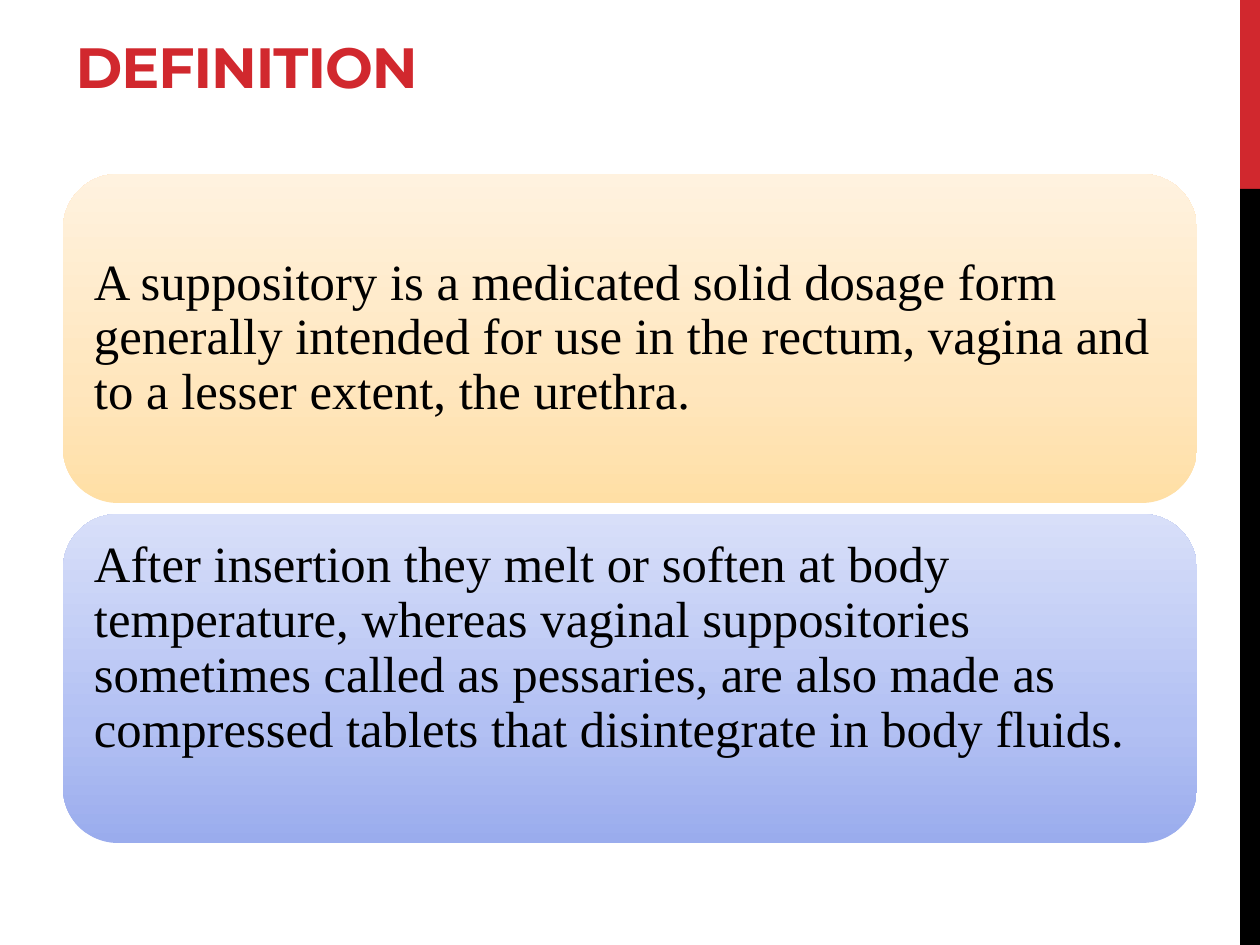
from copy import deepcopy
from dataclasses import dataclass

from pptx import Presentation
from pptx import util as u
from pptx.dml.color import RGBColor
from pptx.enum import shapes, text
from pptx.oxml.ns import qn
from pptx.shapes.autoshape import Shape
from pptx.slide import Slide

PX_PER_INCH = 126


@dataclass(frozen=True)
class Theme:
    red: str = "D1282E"
    black: str = "000000"
    cream: tuple[str, ...] = ("FFDFA5", "FFE6BD", "FFF2DF")
    periwinkle: tuple[str, ...] = ("9AACED", "B2C0F3", "D8DFF9")
    stops: tuple[float, ...] = (0, 0.35, 1)
    title_font: str = "Montserrat"
    body_font: str = "Times New Roman"
    title_size: float = 32.4
    body_size: float = 29


@dataclass(frozen=True)
class Box:
    left: int
    top: int
    width: int
    height: int


@dataclass(frozen=True)
class Panel:
    wording: str
    colors: tuple[str, ...]
    extra_bottom: int = 0


THEME = Theme()
BARS = ((Box(1240, 0, 20, 189), THEME.red), (Box(1240, 189, 20, 756), THEME.black))
TITLE_BOX = Box(63, 21, 1134, 85)
FIRST_PANEL = Box(63, 174, 1134, 329)
PANEL_GAP = 11
PANEL_INSET = 15
PANELS = (
    Panel("A suppository is a medicated solid dosage form generally intended for use "
          "in the rectum, vagina and to a lesser extent, the urethra.", THEME.cream),
    Panel("After insertion they melt or soften at body temperature, whereas vaginal "
          "suppositories sometimes called as pessaries, are also made as compressed "
          "tablets that disintegrate in body fluids.", THEME.periwinkle, extra_bottom=60),
)


def px(length: int) -> u.Emu:
    return u.Emu(round(length * 914400 / PX_PER_INCH))


def place(box: Box) -> tuple[u.Emu, ...]:
    return px(box.left), px(box.top), px(box.width), px(box.height)


def add_shape(slide: Slide, kind: shapes.MSO_SHAPE, box: Box) -> Shape:
    shape = slide.shapes.add_shape(kind, *place(box))
    shape.shadow.inherit = False
    shape.line.fill.background()
    return shape


def add_bar(slide: Slide, box: Box, color: str) -> None:
    bar = add_shape(slide, shapes.MSO_SHAPE.RECTANGLE, box)
    bar.fill.solid()
    bar.fill.fore_color.rgb = RGBColor.from_string(color)


def fill_gradient(shape: Shape, colors: tuple[str, ...]) -> None:
    shape.fill.gradient()
    shape.fill.gradient_angle = 90
    stop_list = shape.element.spPr.find(qn("a:gradFill")).find(qn("a:gsLst"))
    while len(stop_list) < len(colors):
        stop_list.append(deepcopy(stop_list[0]))
    for stop, position, color in zip(shape.fill.gradient_stops, THEME.stops, colors):
        stop.position = position
        stop.color.rgb = RGBColor.from_string(color)


def add_panel(slide: Slide, panel: Panel, box: Box) -> None:
    shape = add_shape(slide, shapes.MSO_SHAPE.ROUNDED_RECTANGLE, box)
    fill_gradient(shape, panel.colors)
    frame = shape.text_frame
    frame.word_wrap = True
    frame.vertical_anchor = text.MSO_ANCHOR.MIDDLE
    frame.margin_left = frame.margin_right = frame.margin_top = px(PANEL_INSET)
    frame.margin_bottom = px(PANEL_INSET + panel.extra_bottom)
    frame.text = panel.wording
    paragraph = frame.paragraphs[0]
    paragraph.alignment = text.PP_ALIGN.LEFT
    paragraph.line_spacing = 0.9
    paragraph.font.name = THEME.body_font
    paragraph.font.size = u.Pt(THEME.body_size)
    paragraph.font.color.rgb = RGBColor.from_string(THEME.black)


def set_title(slide: Slide, wording: str) -> None:
    title = slide.shapes.title
    title.left, title.top, title.width, title.height = place(TITLE_BOX)
    frame = title.text_frame
    frame.text = wording
    frame.vertical_anchor = text.MSO_ANCHOR.BOTTOM
    frame.auto_size = text.MSO_AUTO_SIZE.NONE
    paragraph = frame.paragraphs[0]
    paragraph.alignment = text.PP_ALIGN.LEFT
    paragraph.font.name = THEME.title_font
    paragraph.font.size = u.Pt(THEME.title_size)
    paragraph.font.bold = True
    paragraph.font.color.rgb = RGBColor.from_string(THEME.red)
    # Slightly tightened letter spacing, in hundredths of a point
    paragraph.runs[0].font._element.set("spc", "-60")


def main() -> None:
    presentation = Presentation()
    presentation.slide_width, presentation.slide_height = px(1260), px(945)
    slide = presentation.slides.add_slide(presentation.slide_layouts[5])

    # Side bars
    for box, color in BARS:
        add_bar(slide, box, color)

    # Title
    set_title(slide, "DEFINITION")

    # Stacked definition panels
    first = FIRST_PANEL
    for index, panel in enumerate(PANELS):
        top = first.top + index * (first.height + PANEL_GAP)
        add_panel(slide, panel, Box(first.left, top, first.width, first.height))

    presentation.save("out.pptx")


if __name__ == "__main__":
    main()
